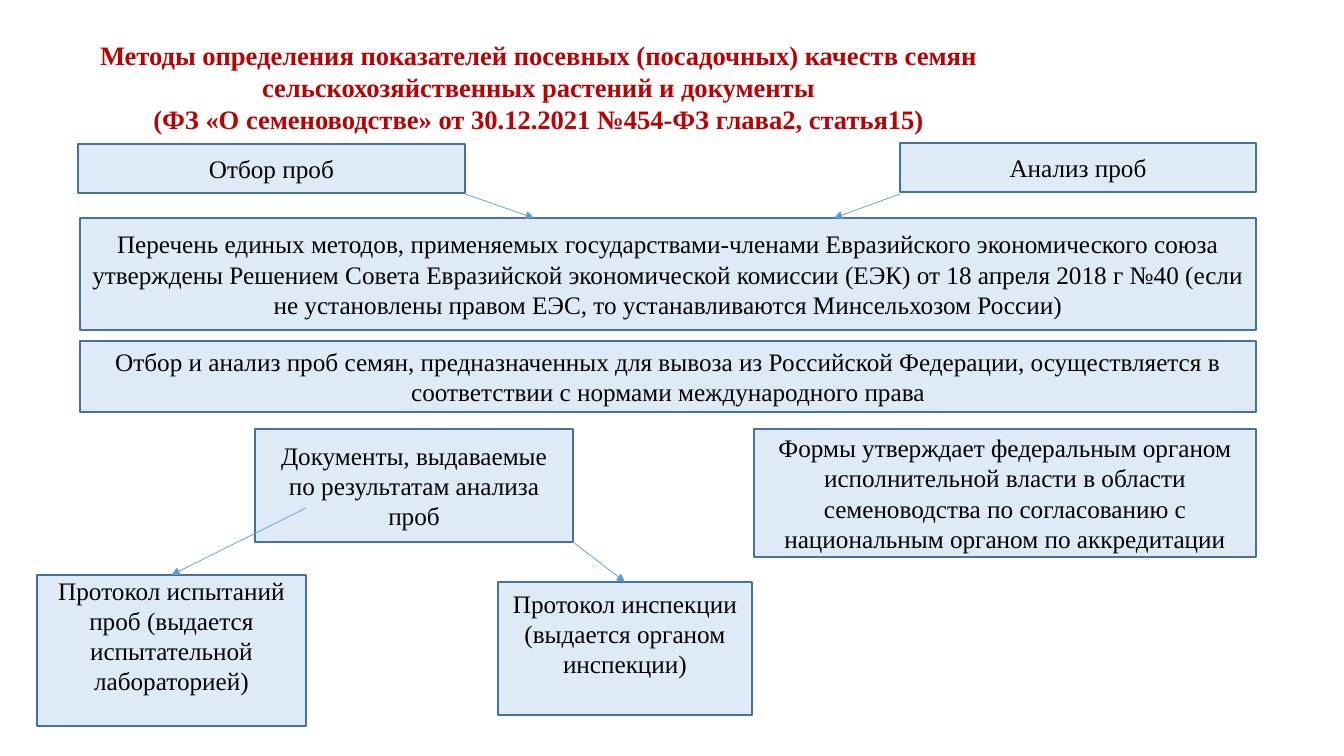
from lxml import etree
from pptx import Presentation
from pptx import util as u
from pptx.dml.color import RGBColor
from pptx.enum import shapes, text
from pptx.oxml.ns import qn

PX = 914400 / 100.8
FONT = "Times New Roman"
RED = RGBColor(0xC0, 0x00, 0x00)
BLACK = RGBColor(0x00, 0x00, 0x00)
PALE_BLUE = RGBColor(0xDE, 0xEB, 0xF7)
BORDER = RGBColor(0x43, 0x73, 0x9E)
ARROW = RGBColor(0x5B, 0x9B, 0xD5)

TITLE = (
    "Методы определения показателей посевных (посадочных) качеств семян "
    "сельскохозяйственных растений и документы\n"
    "(ФЗ «О семеноводстве» от 30.12.2021 №454-ФЗ глава2, статья15)"
)
TITLE_PLACE = (0, 40, 1077, 93)

# name: (left, top, width, height), bottom inset, wording
BOXES = {
    "sampling": ((78, 144, 387, 49), 5, "Отбор проб"),
    "analysis": ((900, 143, 356, 49), 5, "Анализ проб"),
    "methods": (
        (80, 218, 1176, 112), 5,
        "Перечень единых методов, применяемых государствами-членами Евразийского "
        "экономического союза утверждены Решением Совета Евразийской экономической "
        "комиссии (ЕЭК) от 18 апреля 2018 г №40 (если не установлены правом ЕЭС, "
        "то устанавливаются Минсельхозом России)"),
    "export": (
        (80, 341, 1176, 71), 5,
        "Отбор и анализ проб семян, предназначенных для вывоза из Российской Федерации, "
        "осуществляется в соответствии с нормами международного права"),
    "documents": (
        (255, 429, 318, 113), 5, "Документы, выдаваемые по результатам анализа проб"),
    "test_report": (
        (37, 575, 269, 151), 35,
        "Протокол испытаний проб (выдается испытательной лабораторией)"),
    "forms": (
        (754, 429, 502, 128), 5,
        "Формы утверждает федеральным органом исполнительной власти в области "
        "семеноводства по согласованию с национальным органом по аккредитации"),
    "inspection_report": (
        (498, 582, 254, 133), 35,
        "Протокол инспекции\n(выдается органом инспекции)"),
}

# start, end, box whose top middle the arrow reaches
ARROWS = [
    ((465, 194), (534, 218), None),
    ((900, 194), (834, 218), None),
    ((306, 508), (171, 575), "test_report"),
    ((573, 542), (625, 582), "inspection_report"),
]


def px(*lengths):
    return [u.Emu(round(length * PX)) for length in lengths]


def write(frame, wording, size, color, bold=False):
    frame.text = wording
    frame.word_wrap = True
    frame.auto_size = text.MSO_AUTO_SIZE.NONE
    frame.vertical_anchor = text.MSO_ANCHOR.MIDDLE
    for para in frame.paragraphs:
        para.alignment = text.PP_ALIGN.CENTER
        para.space_before = u.Pt(0)
        for span in para.runs:
            span.font.name = FONT
            span.font.size = u.Pt(size)
            span.font.bold = bold
            span.font.color.rgb = color


def add_box(page, place, bottom_inset, wording):
    box = page.shapes.add_shape(shapes.MSO_SHAPE.RECTANGLE, *px(*place))
    box.shadow.inherit = False
    box.fill.solid()
    box.fill.fore_color.rgb = PALE_BLUE
    box.line.color.rgb = BORDER
    box.line.width = u.Pt(1)
    write(box.text_frame, wording, 18, BLACK)
    box.text_frame.margin_bottom = px(bottom_inset)[0]
    return box


def add_arrow(page, start, end, target):
    arrow = page.shapes.add_connector(
        shapes.MSO_CONNECTOR.STRAIGHT, *px(*start, *end))
    if target is not None:
        arrow.end_connect(target, 0)
    arrow.line.color.rgb = ARROW
    arrow.line.width = u.Pt(0.5)
    etree.SubElement(arrow.line._get_or_add_ln(), qn("a:tailEnd"), type="triangle")
    etree.SubElement(arrow._element.spPr, qn("a:effectLst"))


def main():
    deck = Presentation()
    deck.slide_width, deck.slide_height = px(1344, 756)
    page = deck.slides.add_slide(deck.slide_layouts.get_by_name("Title Only"))

    title = page.shapes.title
    title.left, title.top, title.width, title.height = px(*TITLE_PLACE)
    write(title.text_frame, TITLE, 19, RED, bold=True)

    boxes = {name: add_box(page, *details) for name, details in BOXES.items()}
    for start, end, target in ARROWS:
        add_arrow(page, start, end, boxes.get(target))
    deck.save("out.pptx")


if __name__ == "__main__":
    main()
